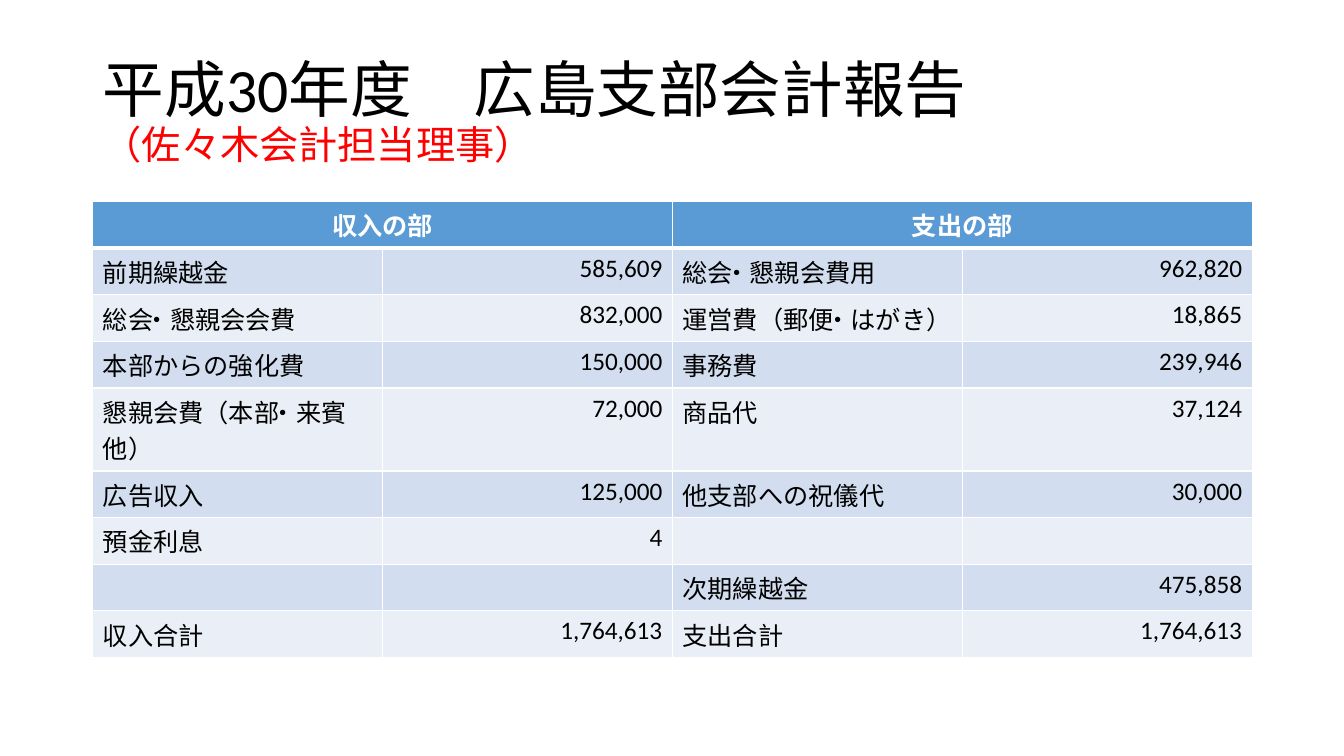
from lxml import etree
from pptx import Presentation
from pptx.dml.color import RGBColor
from pptx.enum import text as t
from pptx.oxml import ns
from pptx.util import Inches, Pt

BLACK = RGBColor(0x00, 0x00, 0x00)
WHITE = RGBColor(0xFF, 0xFF, 0xFF)
RED = RGBColor(0xFF, 0x00, 0x00)
BLUE = RGBColor(0x5B, 0x9B, 0xD5)
BANDS = RGBColor(0xD2, 0xDE, 0xEF), RGBColor(0xEA, 0xEF, 0xF7)
FONT = "Calibri"
DOT = "・"
LEFT, RIGHT, MID = t.PP_ALIGN.LEFT, t.PP_ALIGN.RIGHT, t.PP_ALIGN.CENTER

HEADS = "収入の部", "支出の部"
ROWS = [
    ("前期繰越金", "585,609", "総会・懇親会費用", "962,820"),
    ("総会・懇親会会費", "832,000", "運営費（郵便・はがき）", "18,865"),
    ("本部からの強化費", "150,000", "事務費", "239,946"),
    ("懇親会費（本部・来賓他）", "72,000", "商品代", "37,124"),
    ("広告収入", "125,000", "他支部への祝儀代", "30,000"),
    ("預金利息", "4", "", ""),
    ("", "", "次期繰越金", "475,858"),
    ("収入合計", "1,764,613", "支出合計", "1,764,613"),
]


def style(run, size, color, bold=False):
    font = run.font
    font.name, font.size, font.bold = FONT, Pt(size), bold
    font.color.rgb = color


def add_title(slide, left, top, width, height):
    title = slide.shapes.title
    title.left, title.top, title.width, title.height = left, top, width, height
    frame = title.text_frame
    frame.vertical_anchor = t.MSO_ANCHOR.MIDDLE
    frame.text = "平成30年度　広島支部会計報告\v（佐々木会計担当理事）"
    para = frame.paragraphs[0]
    para.alignment, para.line_spacing = LEFT, 0.9
    main, sub = para.runs
    style(main, 44, BLACK)
    style(sub, 28, RED)


def set_edges(cell, top, base):
    """Draw white borders, with top and bottom widths in points."""
    props = cell._tc.get_or_add_tcPr()
    for side, width in ("L", 1), ("R", 1), ("T", top), ("B", base):
        line = etree.SubElement(props, ns.qn(f"a:ln{side}"), w=str(Pt(width)))
        fill = etree.SubElement(line, ns.qn("a:solidFill"))
        etree.SubElement(fill, ns.qn("a:srgbClr"), val=str(WHITE))


def add_words(para, words):
    """Write the words, closing up the space on both sides of a middle dot."""
    if DOT not in words:
        para.text = words
        return
    cut = words.index(DOT)
    for part in words[:cut - 1], words[cut - 1:cut + 1], words[cut + 1:]:
        run = para.add_run()
        run.text = part
        if DOT in part:
            run.font._element.set("spc", "-600")


def fill_cell(cell, words, align, back, color, bold=False):
    cell.fill.solid()
    cell.fill.fore_color.rgb = back
    para = cell.text_frame.paragraphs[0]
    add_words(para, words)
    para.alignment = align
    para.font.size = Pt(18)
    for run in para.runs:
        style(run, 18, color, bold)


def add_report(slide, left, top, width, height):
    count = len(ROWS) + 1
    table = slide.shapes.add_table(count, 4, left, top, width, height).table
    for col in table.columns:
        col.width = width // 4
    for row in table.rows:
        row.height = height // count

    for c in range(4):
        cell = table.cell(0, c)
        set_edges(cell, 1, 3)
        words = "" if c % 2 else HEADS[c // 2]
        fill_cell(cell, words, MID, BLUE, WHITE, True)
    for c in 0, 2:
        table.cell(0, c).merge(table.cell(0, c + 1))

    for r, row in enumerate(ROWS):
        for c, words in enumerate(row):
            cell = table.cell(r + 1, c)
            set_edges(cell, 1 if r else 3, 1)
            align = RIGHT if c % 2 else LEFT
            fill_cell(cell, words, align, BANDS[r % 2], BLACK)


def main():
    deck = Presentation()
    deck.slide_width, deck.slide_height = Inches(13.33), Inches(7.5)
    slide = deck.slides.add_slide(deck.slide_layouts[5])
    left, width = Inches(0.92), Inches(11.5)
    add_title(slide, left, Inches(0.4), width, Inches(1.45))
    add_report(slide, left, Inches(2), width, Inches(3.65))
    deck.save("out.pptx")


if __name__ == "__main__":
    main()
